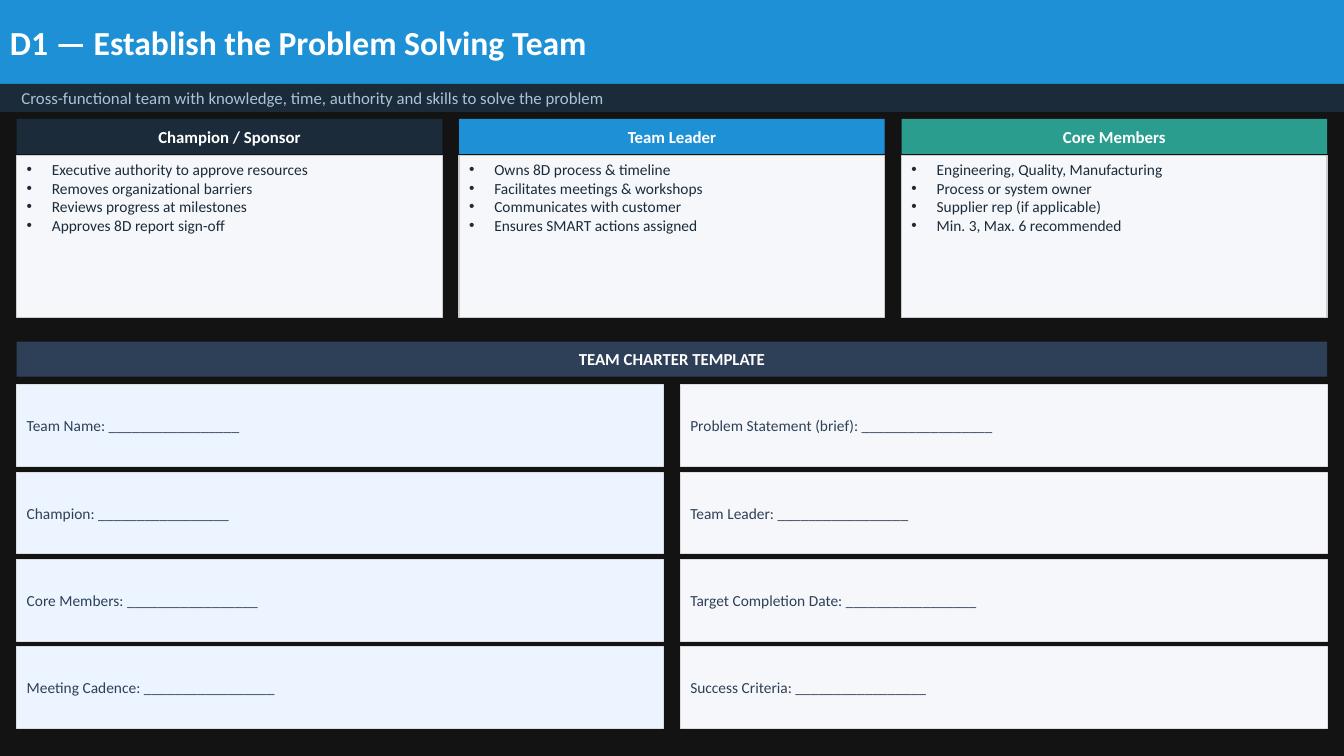
from lxml.etree import SubElement
from pptx import Presentation
from pptx.dml.color import RGBColor as RGB
from pptx.enum.shapes import MSO_SHAPE as Shape
from pptx.enum.text import MSO_ANCHOR as Anchor, PP_ALIGN as Align
from pptx.oxml.ns import qn
from pptx.util import Emu, Pt

PX_PER_INCH = 216
EMU_PER_PX = 914400 / PX_PER_INCH
SLIDE_W, SLIDE_H = 2880, 1620
MARGIN = GAP = 36
CONTENT_W = SLIDE_W - 2 * MARGIN
BAR_H = 75

BLACK = RGB(0x13, 0x13, 0x13)
WHITE = RGB(0xFF, 0xFF, 0xFF)
BLUE = RGB(0x1E, 0x91, 0xD6)
NAVY = RGB(0x1C, 0x2B, 0x3A)
SLATE = RGB(0x2E, 0x40, 0x57)
TEAL = RGB(0x2A, 0x9D, 0x8F)
MIST = RGB(0xA8, 0xC4, 0xD8)
PAPER = RGB(0xF5, 0xF7, 0xFA)
ICE = RGB(0xEB, 0xF4, 0xFF)
CARD_EDGE = RGB(0xCC, 0xCC, 0xCC)
FIELD_EDGE = RGB(0xDD, 0xDD, 0xDD)

ROLES = [
    ("Champion / Sponsor", NAVY, [
        "Executive authority to approve resources",
        "Removes organizational barriers",
        "Reviews progress at milestones",
        "Approves 8D report sign-off",
    ]),
    ("Team Leader", BLUE, [
        "Owns 8D process & timeline",
        "Facilitates meetings & workshops",
        "Communicates with customer",
        "Ensures SMART actions assigned",
    ]),
    ("Core Members", TEAL, [
        "Engineering, Quality, Manufacturing",
        "Process or system owner",
        "Supplier rep (if applicable)",
        "Min. 3, Max. 6 recommended",
    ]),
]
CHARTER = [
    ("Team Name", "Problem Statement (brief)"),
    ("Champion", "Team Leader"),
    ("Core Members", "Target Completion Date"),
    ("Meeting Cadence", "Success Criteria"),
]
BLANK_LINE = "_" * 17


def px(length):
    return Emu(round(length * EMU_PER_PX))


class SlideBuilder:
    font = "Calibri"
    bullet_indent = 54

    def __init__(self, deck):
        self.slide = deck.slides.add_slide(deck.slide_layouts[6])
        background = self.slide.background.fill
        background.solid()
        background.fore_color.rgb = BLACK

    def panel(self, x, y, w, h, fill, edge=None, edge_pt=1):
        panel = self.slide.shapes.add_shape(Shape.RECTANGLE, px(x), px(y), px(w), px(h))
        panel.shadow.inherit = False
        panel.fill.solid()
        panel.fill.fore_color.rgb = fill
        if edge is None:
            panel.line.fill.background()
        else:
            panel.line.color.rgb = edge
            panel.line.width = Pt(edge_pt)
        return panel

    def set_text(self, panel, lines, size, color, bold=False, align=Align.LEFT,
                 anchor=Anchor.MIDDLE, bullets=False, inset=None):
        frame = panel.text_frame
        frame.word_wrap = True
        frame.vertical_anchor = anchor
        if inset is not None:
            frame.margin_left = px(inset)
        for index, line in enumerate(lines):
            paragraph = frame.paragraphs[0] if index == 0 else frame.add_paragraph()
            paragraph.alignment = align
            if bullets:
                self.bullet(paragraph)
            run = paragraph.add_run()
            run.text = line
            style = {"name": self.font, "size": Pt(size), "bold": bold}
            for attribute, value in style.items():
                setattr(run.font, attribute, value)
            run.font.color.rgb = color

    def bullet(self, paragraph):
        properties = paragraph._p.get_or_add_pPr()
        indent = px(self.bullet_indent)
        properties.set("marL", str(indent))
        properties.set("indent", str(-indent))
        SubElement(properties, qn("a:buFont")).set("typeface", "Arial")
        SubElement(properties, qn("a:buChar")).set("char", "•")

    def banner(self, y, h, fill, text, size, color, **text_style):
        self.set_text(self.panel(0, y, SLIDE_W, h, fill), [text], size, color, **text_style)

    def heading(self, x, y, w, fill, text):
        self.set_text(self.panel(x, y, w, BAR_H, fill), [text], 12, WHITE,
                      bold=True, align=Align.CENTER)

    def role_card(self, x, w, title, fill, duties):
        self.heading(x, 255, w, fill, title)
        body = self.panel(x, 333, w, 348, PAPER, CARD_EDGE)
        self.set_text(body, duties, 11, NAVY, anchor=Anchor.TOP, bullets=True)

    def field(self, x, y, w, h, fill, label):
        self.set_text(self.panel(x, y, w, h, fill, FIELD_EDGE, 0.75),
                      [f"{label}: {BLANK_LINE}"], 11, SLATE)


def column_width(count):
    return (CONTENT_W - (count - 1) * GAP) // count


def main():
    deck = Presentation()
    deck.slide_width, deck.slide_height = px(SLIDE_W), px(SLIDE_H)
    builder = SlideBuilder(deck)

    builder.banner(0, 180, BLUE, "D1 — Establish the Problem Solving Team", 24, WHITE, bold=True)
    builder.banner(180, 60, NAVY,
                   "Cross-functional team with knowledge, time, authority and skills to solve the problem",
                   12, MIST, inset=46)

    role_w = column_width(len(ROLES))
    for column, (title, fill, duties) in enumerate(ROLES):
        builder.role_card(MARGIN + column * (role_w + GAP), role_w, title, fill, duties)

    builder.heading(MARGIN, 732, CONTENT_W, SLATE, "TEAM CHARTER TEMPLATE")
    field_w, field_h, row_gap = column_width(2), 175, 12
    for row, labels in enumerate(CHARTER):
        y = 825 + row * (field_h + row_gap)
        for column, (label, fill) in enumerate(zip(labels, (ICE, PAPER))):
            builder.field(MARGIN + column * (field_w + GAP), y, field_w, field_h, fill, label)

    deck.save("out.pptx")


if __name__ == "__main__":
    main()
